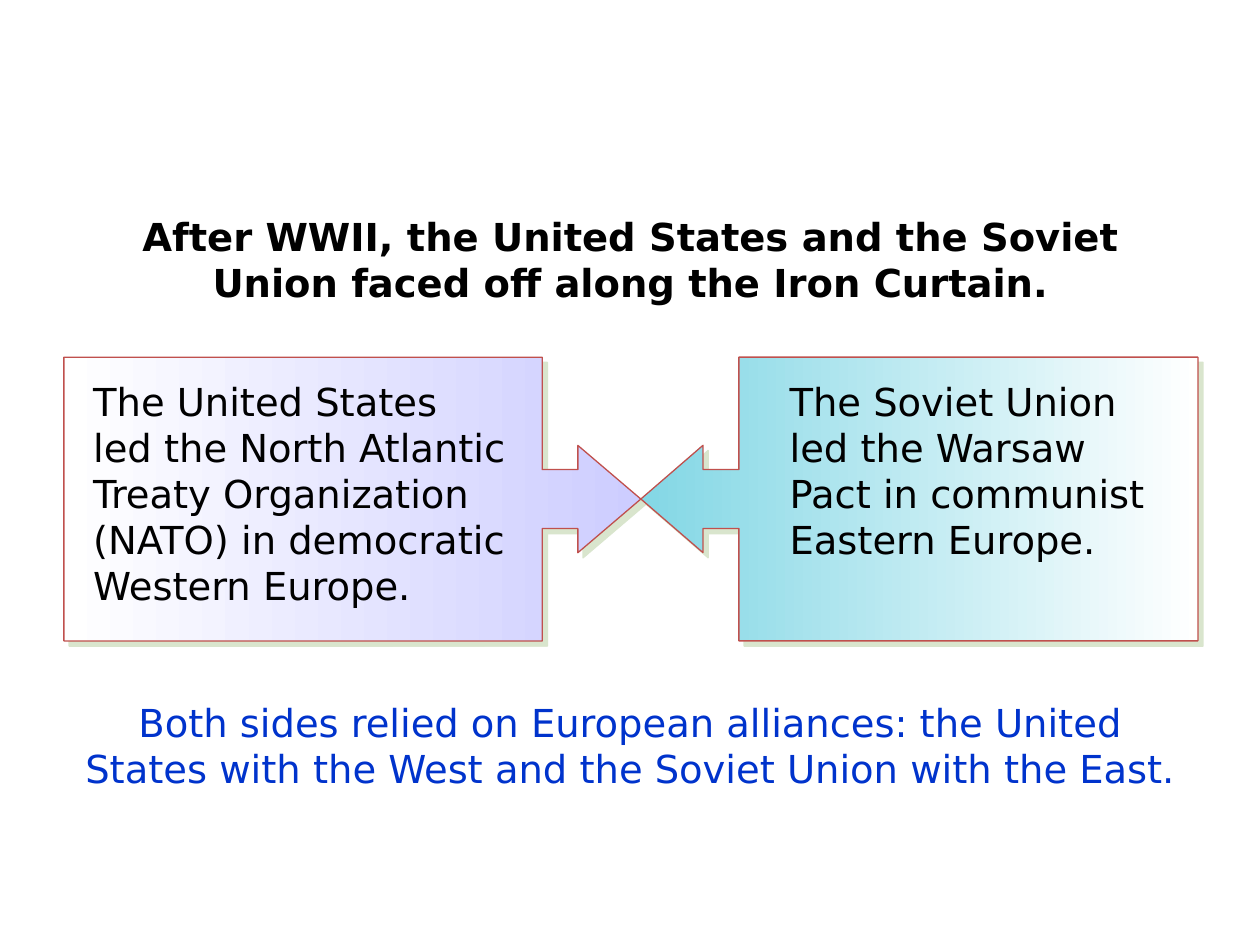
from lxml.etree import SubElement
from pptx import Presentation
from pptx.dml.color import RGBColor
from pptx.enum.shapes import MSO_SHAPE
from pptx.enum.text import MSO_AUTO_SIZE, PP_ALIGN
from pptx.oxml.ns import qn
from pptx.util import Cm, Pt

COLORS = {
    "black": "000000",
    "blue": "0033CC",
    "lavender": "CDCDFF",
    "aqua": "83D7E5",
    "white": "FFFFFF",
    "outline": "C0504D",
    "shadow": "ADC793",
}

TIP_X, MIDDLE_Y, CALLOUT_HEIGHT = 12.92, 10.06, 5.72

CALLOUTS = [
    {"side": -1, "length": 11.63, "rotation": 90, "color": "lavender",
     "adjustments": (0.208, 0.189, 0.222, 0.829)},
    {"side": 1, "length": 11.23, "rotation": 270, "color": "aqua",
     "adjustments": (0.208, 0.189, 0.219, 0.824)},
]

TEXTS = [
    {"text": "The United States\nled the North Atlantic Treaty Organization "
             "(NATO) in democratic Western Europe.",
     "at": (1.63, 7.49, 9.17, 4.98), "align": PP_ALIGN.LEFT,
     "color": "black", "bold": False},
    {"text": "The Soviet Union led the Warsaw Pact in communist Eastern Europe.",
     "at": (15.67, 7.49, 7.82, 4.04), "align": PP_ALIGN.LEFT,
     "color": "black", "bold": False},
    {"text": "After WWII, the United States and the Soviet Union faced off "
             "along the Iron Curtain.",
     "at": (2.34, 4.17, 20.73, 2.13), "align": PP_ALIGN.CENTER,
     "color": "black", "bold": True},
    {"text": "Both sides relied on European alliances: the United States with "
             "the West and the Soviet Union with the East.",
     "at": (1.27, 13.97, 22.86, 2.13), "align": PP_ALIGN.CENTER,
     "color": "blue", "bold": False},
]


def rgb(name):
    return RGBColor.from_string(COLORS[name])


def add_shadow(shape):
    shape.shadow.inherit = False
    effects = shape.element.spPr.find(qn("a:effectLst"))
    shadow = SubElement(effects, qn("a:outerShdw"), dist=str(Pt(4.2)),
                        dir="2700000", algn="ctr", rotWithShape="0")
    color = SubElement(shadow, qn("a:srgbClr"), val=COLORS["shadow"])
    SubElement(color, qn("a:alpha"), val="46000")


def add_callout(page, callout):
    length = callout["length"]
    center_x = TIP_X + callout["side"] * length / 2
    shape = page.shapes.add_shape(
        MSO_SHAPE.UP_ARROW_CALLOUT,
        Cm(center_x - CALLOUT_HEIGHT / 2), Cm(MIDDLE_Y - length / 2),
        Cm(CALLOUT_HEIGHT), Cm(length))
    shape.rotation = callout["rotation"]
    shape.element.spPr.xfrm.set("flipH", "1")
    for index, value in enumerate(callout["adjustments"]):
        shape.adjustments[index] = value
    shape.fill.gradient()
    shape.fill.gradient_angle = 270
    for stop, color, position in zip(
            shape.fill.gradient_stops, (callout["color"], "white"), (0, 1)):
        stop.color.rgb = rgb(color)
        stop.position = position
    shape.line.color.rgb = rgb("outline")
    shape.line.width = Pt(0.75)
    add_shadow(shape)


def add_text(page, item):
    box = page.shapes.add_textbox(*map(Cm, item["at"]))
    frame = box.text_frame
    frame.word_wrap = True
    frame.auto_size = MSO_AUTO_SIZE.SHAPE_TO_FIT_TEXT
    para = frame.paragraphs[0]
    para.text = item["text"]
    para.alignment = item["align"]
    formats = {"name": "DejaVu Sans", "size": Pt(22), "bold": item["bold"]}
    for span in para.runs:
        for attribute, value in formats.items():
            setattr(span.font, attribute, value)
        span.font.color.rgb = rgb(item["color"])


def main():
    deck = Presentation()
    deck.slide_width, deck.slide_height = Cm(25.4), Cm(19.05)
    page = deck.slides.add_slide(deck.slide_layouts[6])
    for callout in CALLOUTS:
        add_callout(page, callout)
    for item in TEXTS:
        add_text(page, item)
    deck.save("out.pptx")


if __name__ == "__main__":
    main()
